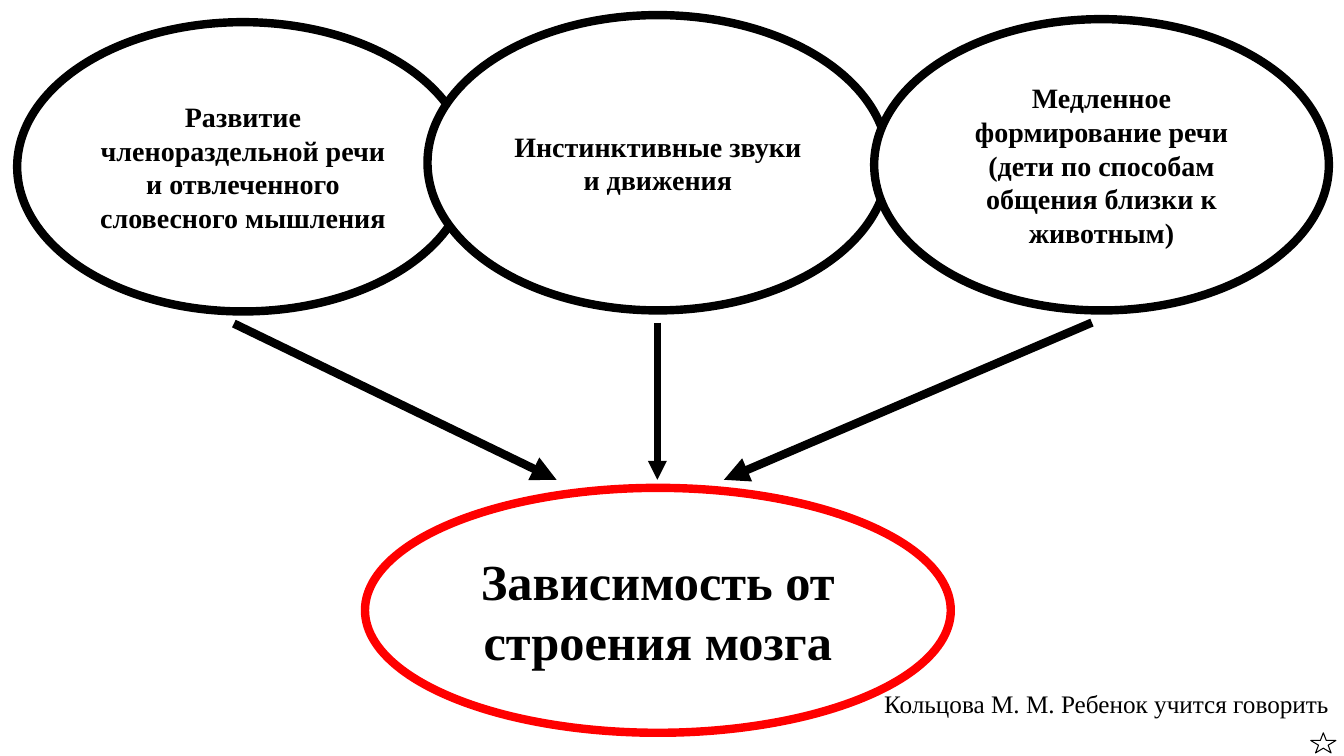
from dataclasses import dataclass

import lxml.etree
import pptx
import pptx.dml.color
import pptx.enum.shapes
import pptx.enum.text
import pptx.oxml.ns
import pptx.util

Inches = pptx.util.Inches
Pt = pptx.util.Pt

COLOURS = {"ink": "000000", "paper": "FFFFFF", "accent": "FF0000"}
FONT = "Times New Roman"


@dataclass
class Idea:
    left: float
    top: float
    width: float
    height: float
    paragraphs: list[str]
    size: int = 20
    outline: str = "ink"


@dataclass
class Arrow:
    start: tuple[float, float]
    end: tuple[float, float]
    weight: float = 6


FACTORS = [
    Idea(0.17, 0.22, 4.48, 2.87,
         ["Развитие членораздельной речи", "и отвлеченного словесного мышления"]),
    Idea(4.24, 0.15, 4.57, 2.93, ["Инстинктивные звуки и движения"]),
    Idea(8.67, 0.19, 4.51, 2.89,
         ["Медленное формирование речи",
          "(дети по способам общения близки к животным)"]),
]
ARROWS = [
    Arrow((6.52, 3.2), (6.52, 4.76), 4.5),
    Arrow((2.32, 3.21), (5.52, 4.76)),
    Arrow((10.83, 3.2), (7.18, 4.76)),
]
CONCLUSION = Idea(3.62, 4.84, 5.81, 2.43, ["Зависимость от строения мозга"], 36, "accent")


def colour(name: str) -> pptx.dml.color.RGBColor:
    return pptx.dml.color.RGBColor.from_string(COLOURS[name])


def write(paragraph, text: str, size: int, bold: bool) -> None:
    run = paragraph.add_run()
    run.text = text
    for attribute, value in {"name": FONT, "size": Pt(size), "bold": bold}.items():
        setattr(run.font, attribute, value)
    run.font.color.rgb = colour("ink")


def draw_idea(slide, idea: Idea) -> None:
    ellipse = slide.shapes.add_shape(
        pptx.enum.shapes.MSO_SHAPE.OVAL,
        Inches(idea.left), Inches(idea.top), Inches(idea.width), Inches(idea.height))
    ellipse.shadow.inherit = False
    ellipse.fill.solid()
    ellipse.fill.fore_color.rgb = colour("paper")
    ellipse.line.color.rgb = colour(idea.outline)
    ellipse.line.width = Pt(6)
    frame = ellipse.text_frame
    layout = {"word_wrap": True, "vertical_anchor": pptx.enum.text.MSO_ANCHOR.MIDDLE}
    for attribute, value in layout.items():
        setattr(frame, attribute, value)
    for index, text in enumerate(idea.paragraphs):
        paragraph = frame.add_paragraph() if index else frame.paragraphs[0]
        paragraph.alignment = pptx.enum.text.PP_ALIGN.CENTER
        write(paragraph, text, idea.size, True)


def draw_arrow(slide, arrow: Arrow) -> None:
    connector = slide.shapes.add_connector(
        pptx.enum.shapes.MSO_CONNECTOR.STRAIGHT,
        *map(Inches, arrow.start), *map(Inches, arrow.end))
    connector.line.color.rgb = colour("ink")
    connector.line.width = Pt(arrow.weight)
    qn = pptx.oxml.ns.qn
    lxml.etree.SubElement(connector.line._get_or_add_ln(), qn("a:tailEnd"), type="triangle")
    lxml.etree.SubElement(connector._element.spPr, qn("a:effectLst"))


def draw_citation(slide) -> None:
    citation = slide.shapes.add_textbox(Inches(8.67), Inches(6.78), Inches(4.72), Inches(0.4))
    frame = citation.text_frame
    layout = {"word_wrap": False, "auto_size": pptx.enum.text.MSO_AUTO_SIZE.SHAPE_TO_FIT_TEXT}
    for attribute, value in layout.items():
        setattr(frame, attribute, value)
    write(frame.paragraphs[0], "Кольцова М. М. Ребенок учится говорить", 18, False)


def draw_star(slide) -> None:
    star = slide.shapes.add_shape(
        pptx.enum.shapes.MSO_SHAPE.STAR_5_POINT,
        Inches(13), Inches(7.27), Inches(0.25), Inches(0.2))
    star.shadow.inherit = False
    star.fill.background()
    star.line.color.rgb = colour("ink")
    star.line.width = Pt(0.75)


def main() -> None:
    presentation = pptx.Presentation()
    presentation.slide_width = Inches(13.33)
    presentation.slide_height = Inches(7.5)
    slide = presentation.slides.add_slide(presentation.slide_layouts[6])
    for factor in FACTORS:
        draw_idea(slide, factor)
    for arrow in ARROWS:
        draw_arrow(slide, arrow)
    draw_idea(slide, CONCLUSION)
    draw_citation(slide)
    draw_star(slide)
    presentation.save("out.pptx")


if __name__ == "__main__":
    main()
